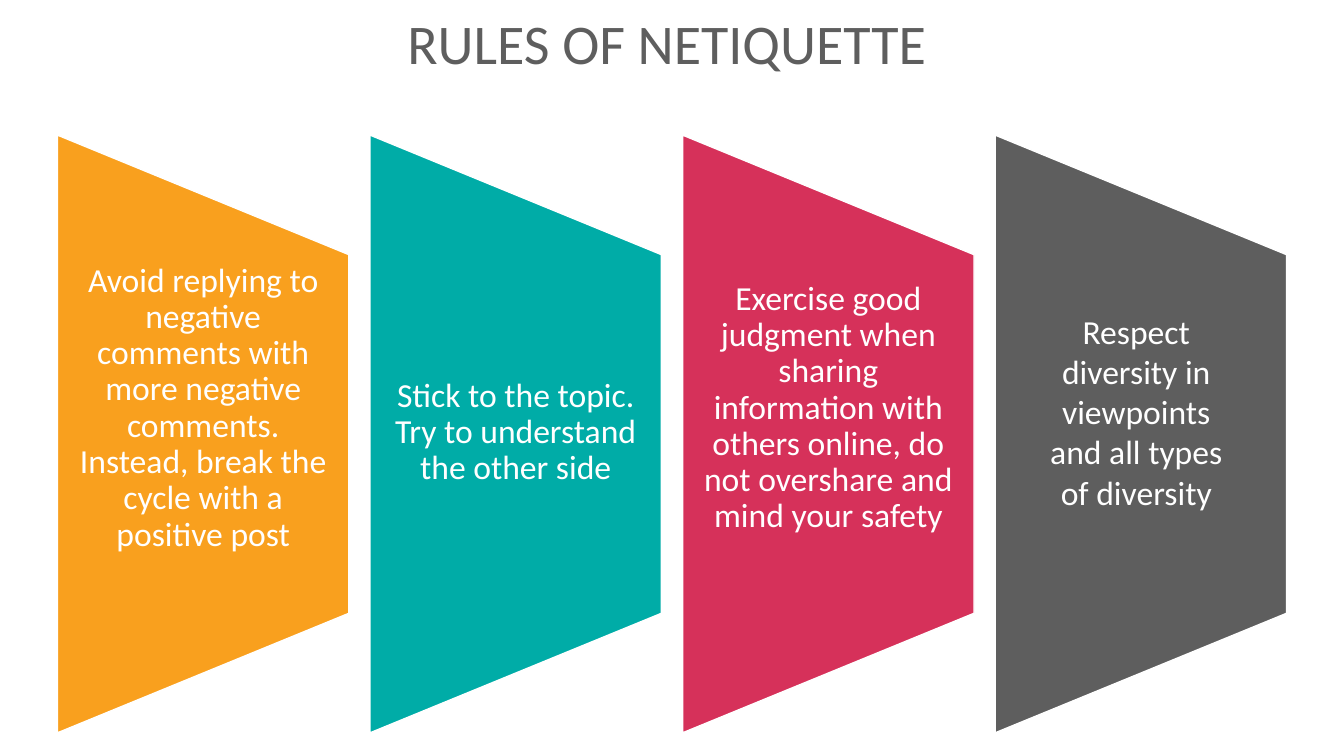
import pptx
import pptx.dml.color
import pptx.enum.shapes
import pptx.enum.text
import pptx.util
from dataclasses import dataclass

Inches = pptx.util.Inches
Pt = pptx.util.Pt
Align = pptx.enum.text.PP_ALIGN
Anchor = pptx.enum.text.MSO_ANCHOR


@dataclass(frozen=True)
class Theme:
    font: str = "Calibri"
    title_size: int = 40
    body_size: int = 24
    orange: str = "F9A01E"
    teal: str = "00ACA7"
    red: str = "D6315A"
    grey: str = "5E5E5E"
    white: str = "FFFFFF"


THEME = Theme()
PANEL_LEFT, PANEL_TOP, PANEL_PITCH = 0.57, 1.34, 3.1
PANEL_W, PANEL_H = 2.89, 5.93

# Colour, text, text box (offset from panel left, top, width, height),
# side inset, line spacing
RULES = [
    (THEME.orange,
     "Avoid replying to negative comments with more negative comments. "
     "Instead, break the cycle with a positive post",
     (0, 2.27, PANEL_W, 3.56), 0.17, 0.9),
    (THEME.teal, "Stick to the topic. Try to understand the other side",
     (0, 2.51, PANEL_W, 3.56), 0.17, 0.9),
    (THEME.red,
     "Exercise good judgment when sharing information with others online, "
     "do not overshare and mind your safety",
     (0, 2.27, PANEL_W, 3.56), 0.17, 0.9),
    (THEME.grey, "Respect diversity in viewpoints and all types of diversity",
     (0.33, 3.03, 2.14, 2.1), 0.1, 1.0),
]


def rgb(value):
    return pptx.dml.color.RGBColor.from_string(value)


def style_paragraph(p, size, color, align, spacing):
    p.alignment = align
    p.line_spacing = spacing
    p.space_before = Pt(0)
    for r in p.runs:
        r.font.name = THEME.font
        r.font.size = Pt(size)
        r.font.color.rgb = rgb(color)


def add_title(s, text):
    sp = s.shapes.title
    sp.left, sp.top = Inches(3.94), Inches(0.11)
    sp.width, sp.height = Inches(5.76), Inches(1.04)
    tf = sp.text_frame
    tf.text = text
    tf.word_wrap = True
    tf.auto_size = pptx.enum.text.MSO_AUTO_SIZE.NONE
    tf.vertical_anchor = Anchor.TOP
    style_paragraph(tf.paragraphs[0], THEME.title_size, THEME.grey,
                    Align.LEFT, 0.9)


def add_panel(s, left, color):
    """Draw a trapezoid turned on its side, with its long edge at left."""
    shift = (PANEL_H - PANEL_W) / 2
    sp = s.shapes.add_shape(
        pptx.enum.shapes.MSO_SHAPE.FLOWCHART_MANUAL_OPERATION,
        Inches(left - shift), Inches(PANEL_TOP + shift),
        Inches(PANEL_H), Inches(PANEL_W))
    sp.rotation = 270
    sp.shadow.inherit = False
    sp.fill.solid()
    sp.fill.fore_color.rgb = rgb(color)
    sp.line.color.rgb = rgb(THEME.white)
    sp.line.width = Pt(1)


def add_rule_text(s, text, box, inset, spacing):
    sp = s.shapes.add_textbox(*(Inches(v) for v in box))
    tf = sp.text_frame
    tf.text = text
    tf.word_wrap = True
    tf.vertical_anchor = Anchor.MIDDLE
    tf.margin_left = tf.margin_right = Inches(inset)
    tf.margin_top = tf.margin_bottom = 0
    style_paragraph(tf.paragraphs[0], THEME.body_size, THEME.white,
                    Align.CENTER, spacing)


def main():
    prs = pptx.Presentation()
    prs.slide_width, prs.slide_height = Inches(13.33), Inches(7.5)
    s = prs.slides.add_slide(prs.slide_layouts.get_by_name("Title Only"))
    add_title(s, "RULES OF NETIQUETTE")
    for i, (color, text, box, inset, spacing) in enumerate(RULES):
        left = PANEL_LEFT + i * PANEL_PITCH
        offset, top, width, height = box
        add_panel(s, left, color)
        add_rule_text(s, text, (left + offset, top, width, height),
                      inset, spacing)
    prs.save("out.pptx")


if __name__ == "__main__":
    main()
